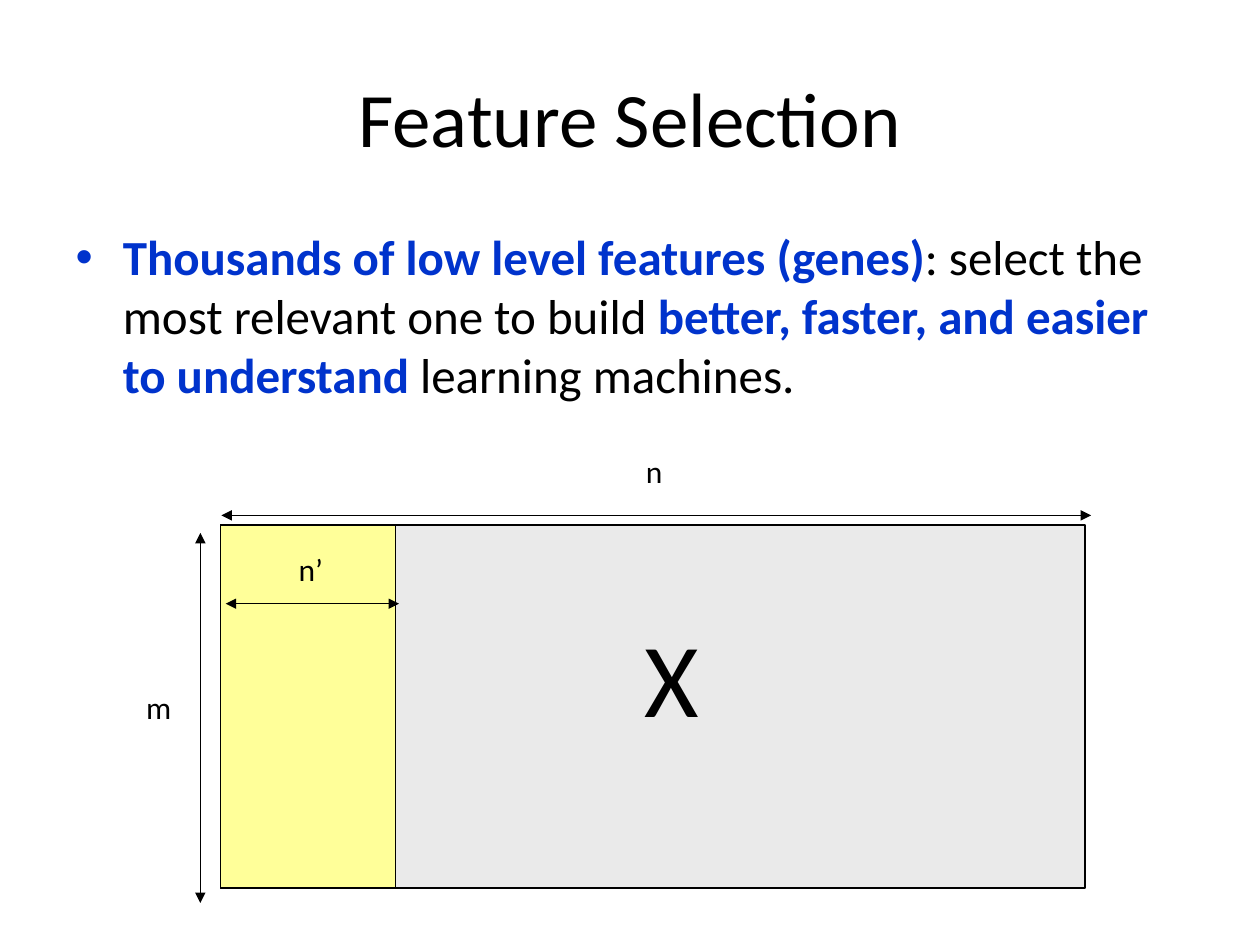
from dataclasses import dataclass

from lxml import etree
from pptx import Presentation
from pptx.dml.color import RGBColor
from pptx.enum.shapes import MSO_CONNECTOR, MSO_SHAPE
from pptx.enum.text import MSO_AUTO_SIZE
from pptx.oxml.ns import qn
from pptx.util import Pt

RECTANGLE = MSO_SHAPE.RECTANGLE
STRAIGHT = MSO_CONNECTOR.STRAIGHT
FIT_SHAPE = MSO_AUTO_SIZE.SHAPE_TO_FIT_TEXT

FONT = "Calibri"
BLACK = "000000"
BLUE = "0033CC"
LINE_WIDTH = 0.75


@dataclass
class Block:
    left: float
    top: float
    width: float
    height: float
    fill: str


@dataclass
class Arrow:
    start_x: float
    start_y: float
    end_x: float
    end_y: float


@dataclass
class Label:
    text: str
    left: float
    top: float
    width: float
    height: float
    size: float = 18
    wrap: bool = False


BLOCKS = [
    Block(126, 300, 494, 207.5, "EAEAEA"),
    Block(126, 300, 100, 207.5, "FFFF99"),
]
ARROWS = [
    Arrow(126.5, 294.5, 623.5, 294.5),
    Arrow(114.5, 304.5, 114.5, 516),
    Arrow(129, 345, 228, 345),
]
LABELS = [
    Label("X", 361, 346.5, 160, 79, 60, True),
    Label("n", 362, 255, 26.5, 36),
    Label("m", 76.5, 389.5, 33, 36),
    Label("n’", 163.5, 311, 34.5, 36),
]
BODY_RUNS = [
    ("Thousands of low level features (genes)", True),
    (": select the most relevant one to build ", False),
    ("better, faster, and easier to understand", True),
    (" learning machines.", False),
]


def color(value: str) -> RGBColor:
    return RGBColor.from_string(value)


def add_run(paragraph, text: str, size: float, fill: str = BLACK, bold: bool = False) -> None:
    run = paragraph.add_run()
    run.text = text
    formats = {"name": FONT, "size": Pt(size), "bold": bold}
    for name, value in formats.items():
        setattr(run.font, name, value)
    run.font.color.rgb = color(fill)


def place(shape, left: float, top: float, width: float, height: float) -> None:
    bounds = {"left": left, "top": top, "width": width, "height": height}
    for name, value in bounds.items():
        setattr(shape, name, Pt(value))


def set_line(shape) -> None:
    shape.line.color.rgb = color(BLACK)
    shape.line.width = Pt(LINE_WIDTH)


def add_block(slide, block: Block) -> None:
    shape = slide.shapes.add_shape(
        RECTANGLE, Pt(block.left), Pt(block.top), Pt(block.width), Pt(block.height)
    )
    shape.shadow.inherit = False
    shape.fill.solid()
    shape.fill.fore_color.rgb = color(block.fill)
    set_line(shape)


def add_arrow(slide, arrow: Arrow) -> None:
    connector = slide.shapes.add_connector(
        STRAIGHT, Pt(arrow.start_x), Pt(arrow.start_y), Pt(arrow.end_x), Pt(arrow.end_y)
    )
    set_line(connector)
    line = connector.line._get_or_add_ln()
    for tag in ("a:headEnd", "a:tailEnd"):
        etree.SubElement(line, qn(tag), type="triangle")
    etree.SubElement(connector._element.spPr, qn("a:effectLst"))


def add_label(slide, label: Label) -> None:
    shape = slide.shapes.add_textbox(
        Pt(label.left), Pt(label.top), Pt(label.width), Pt(label.height)
    )
    frame = shape.text_frame
    frame.word_wrap = label.wrap
    frame.auto_size = FIT_SHAPE
    add_run(frame.paragraphs[0], label.text, label.size)


def main() -> None:
    presentation = Presentation()
    presentation.slide_width = Pt(720)
    presentation.slide_height = Pt(540)
    slide = presentation.slides.add_slide(presentation.slide_layouts[1])

    title = slide.shapes.title
    place(title, 36, 21.6, 648, 90)
    add_run(title.text_frame.paragraphs[0], "Feature Selection", 44)

    body = slide.placeholders[1]
    place(body, 36, 126, 648, 356.4)
    for text, emphasized in BODY_RUNS:
        fill = BLUE if emphasized else BLACK
        add_run(body.text_frame.paragraphs[0], text, 28, fill, emphasized)

    for block in BLOCKS:
        add_block(slide, block)
    for arrow in ARROWS:
        add_arrow(slide, arrow)
    for label in LABELS:
        add_label(slide, label)

    presentation.save("out.pptx")


if __name__ == "__main__":
    main()
